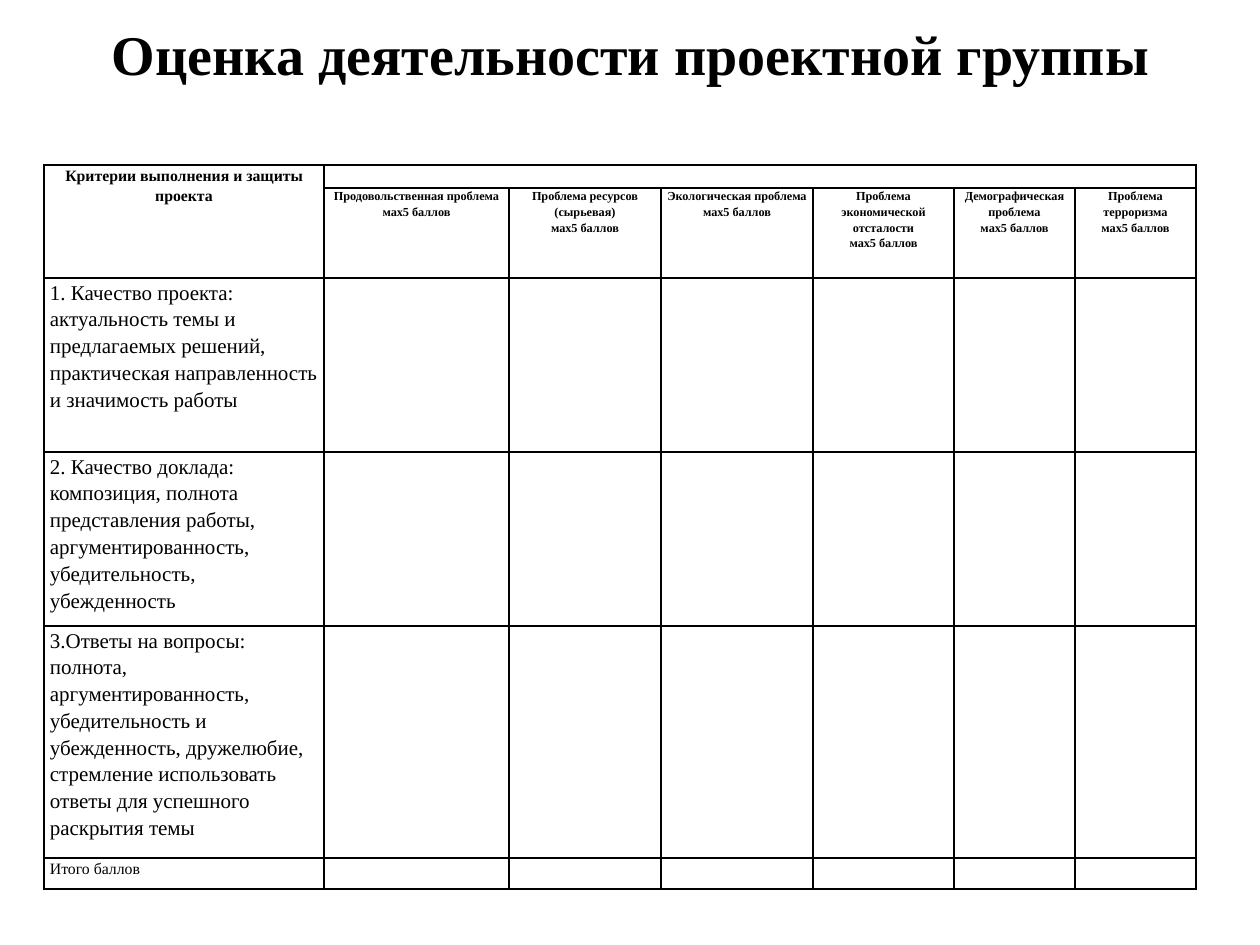
from lxml import etree
from pptx import Presentation
from pptx.dml.color import RGBColor
from pptx.enum.text import MSO_ANCHOR, MSO_AUTO_SIZE, PP_ALIGN
from pptx.oxml.ns import qn
from pptx.util import Emu, Pt

PX_PER_INCH = 126
FONT = "Times New Roman"
BLACK = RGBColor(0x00, 0x00, 0x00)
CENTER, LEFT = PP_ALIGN.CENTER, PP_ALIGN.LEFT
MIDDLE = MSO_ANCHOR.MIDDLE
NO_AUTOFIT = MSO_AUTO_SIZE.NONE

COLUMN_WIDTHS = [280, 185, 152, 152, 141, 121, 121]
ROW_HEIGHTS = [23, 90, 174, 174, 232, 31]
PROBLEMS = [
    "Продовольственная проблема",
    "Проблема ресурсов (сырьевая)",
    "Экологическая проблема",
    "Проблема экономической отсталости",
    "Демографическая проблема",
    "Проблема терроризма",
]
MAX_SCORE = "мax5 баллов"
CRITERIA = [
    "1. Качество проекта: актуальность темы и предлагаемых решений, "
    "практическая направленность и значимость работы",
    "2. Качество доклада: композиция, полнота представления работы, "
    "аргументированность, убедительность, убежденность",
    "3.Ответы на вопросы: полнота, аргументированность, убедительность и "
    "убежденность, дружелюбие, стремление использовать ответы для успешного "
    "раскрытия темы",
]


def px(length):
    return Emu(round(length * 914400 / PX_PER_INCH))


class SlideBuilder:
    def __init__(self, slide):
        self.slide = slide

    def style(self, font, size, bold):
        font.name, font.size, font.bold = FONT, Pt(size), bold
        font.color.rgb = BLACK

    def title(self, text, x, y, width, height):
        title = self.slide.shapes.title
        title.left, title.top = px(x), px(y)
        title.width, title.height = px(width), px(height)
        frame = title.text_frame
        frame.auto_size, frame.vertical_anchor = NO_AUTOFIT, MIDDLE
        paragraph = frame.paragraphs[0]
        paragraph.text = text
        paragraph.alignment = CENTER
        self.style(paragraph.runs[0].font, 32, True)

    def table(self, x, y, widths, heights):
        table = self.slide.shapes.add_table(
            len(heights), len(widths), px(x), px(y),
            px(sum(widths)), px(sum(heights))).table
        table.first_row = table.horz_banding = False
        for column, width in zip(table.columns, widths):
            column.width = px(width)
        for row, height in zip(table.rows, heights):
            row.height = px(height)
        for cell in table.iter_cells():
            self.cell_frame(cell)
        return table

    def cell_frame(self, cell):
        cell.margin_left = cell.margin_right = px(6)
        cell.margin_top = cell.margin_bottom = 0
        # Small end mark keeps unfilled cells from stretching their rows
        end_mark = cell.text_frame.paragraphs[0]._p.get_or_add_endParaRPr()
        end_mark.set("sz", "700")
        # Borders come before the fill in the cell properties
        properties = cell._tc.get_or_add_tcPr()
        for side in ("a:lnL", "a:lnR", "a:lnT", "a:lnB"):
            line = etree.SubElement(properties, qn(side), w=str(Pt(1)))
            fill = etree.SubElement(line, qn("a:solidFill"))
            etree.SubElement(fill, qn("a:srgbClr"), val=str(BLACK))
        cell.fill.background()

    def cell_text(self, cell, lines, size, bold=False, align=LEFT, after=0):
        cell.text = "\n".join(lines)
        for paragraph in cell.text_frame.paragraphs:
            paragraph.alignment = align
            paragraph.line_spacing = 1.15
            paragraph.space_after = Pt(after)
            self.style(paragraph.font, size, bold)


def main():
    presentation = Presentation()
    presentation.slide_width, presentation.slide_height = px(1260), px(945)
    title_only = presentation.slide_layouts[5]
    builder = SlideBuilder(presentation.slides.add_slide(title_only))

    # Title, closed by a line break
    builder.title("Оценка деятельности проектной группы\v", 64, 55, 1134, 89)

    # Score table with merged header cells
    scores = builder.table(44, 165, COLUMN_WIDTHS, ROW_HEIGHTS)
    scores.cell(0, 0).merge(scores.cell(1, 0))
    scores.cell(0, 1).merge(scores.cell(0, 6))
    builder.cell_text(scores.cell(0, 0), ["Критерии выполнения и защиты проекта"],
                      9, True, CENTER, after=10)

    # Problem headings
    for column, problem in enumerate(PROBLEMS, start=1):
        builder.cell_text(scores.cell(1, column), [problem, MAX_SCORE],
                          7, True, CENTER)

    # Criteria and total
    for row, criterion in enumerate(CRITERIA, start=2):
        builder.cell_text(scores.cell(row, 0), [criterion], 12)
    builder.cell_text(scores.cell(5, 0), ["Итого баллов"], 9)

    presentation.save("out.pptx")


if __name__ == "__main__":
    main()
